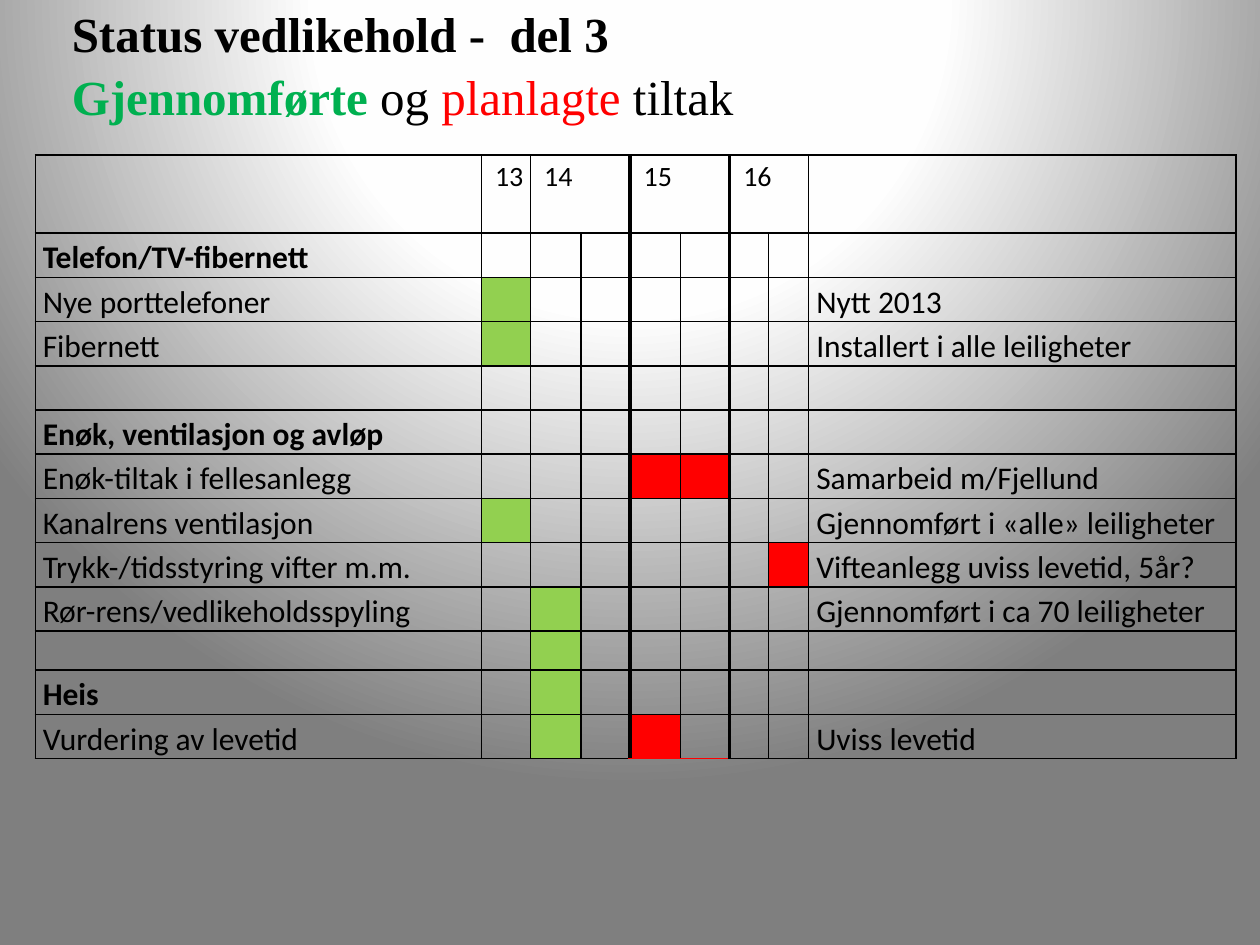
from pptx import Presentation
from pptx.dml.color import RGBColor
from pptx.enum import text
from pptx.oxml import parse_xml
from pptx.oxml.ns import nsdecls
from pptx.util import Inches, Pt

BLACK, GREEN, RED = "000000", "92D050", "FF0000"
COL_WIDTHS = [3.54, 0.39, 0.4, 0.39, 0.4, 0.39, 0.31, 0.32, 3.39]
HEADER_HEIGHT, ROW_HEIGHT, GAP_HEIGHT = 0.62, 0.35, 0.31
GAP_ROW = 10
THICK_EDGES = {4, 6}
YEARS = {1: "13", 2: "14", 4: "15", 6: "16"}
MEASURES = [
    ("Telefon/TV-fibernett", "", {}),
    ("Nye porttelefoner", "Nytt 2013", {1: GREEN}),
    ("Fibernett", "Installert i alle leiligheter", {1: GREEN}),
    ("", "", {}),
    ("Enøk, ventilasjon og avløp", "", {}),
    ("Enøk-tiltak i fellesanlegg", "Samarbeid m/Fjellund", {4: RED, 5: RED}),
    ("Kanalrens ventilasjon", "Gjennomført i «alle» leiligheter", {1: GREEN}),
    ("Trykk-/tidsstyring vifter m.m.", "Vifteanlegg uviss levetid, 5år?", {7: RED}),
    ("Rør-rens/vedlikeholdsspyling", "Gjennomført i ca 70 leiligheter", {2: GREEN}),
    ("", "", {2: GREEN}),
    ("Heis", "", {2: GREEN}),
    ("Vurdering av levetid", "Uviss levetid", {2: GREEN, 4: RED}),
]
HEADINGS = {"Telefon/TV-fibernett", "Enøk, ventilasjon og avløp", "Heis"}


def rgb(color):
    return RGBColor.from_string(color)


def style_run(r, font, size, color=BLACK, bold=False):
    r.font.name = font
    r.font.size = Pt(size)
    r.font.bold = bold
    r.font.color.rgb = rgb(color)


def set_background(s):
    stops = "".join(
        f'<a:gs pos="{pos * 1000}"><a:srgbClr val="{color}"/></a:gs>'
        for pos, color in [(0, "FFFFFF"), (40, "FEFEFE"), (100, "7F7F7F")])
    s.element.cSld.insert(0, parse_xml(
        f'<p:bg {nsdecls("p", "a")}><p:bgPr><a:gradFill rotWithShape="1">'
        f'<a:gsLst>{stops}</a:gsLst><a:path path="circle">'
        '<a:fillToRect l="50000" t="-80000" r="50000" b="180000"/></a:path>'
        '</a:gradFill><a:effectLst/></p:bgPr></p:bg>'))


def add_title(s):
    lines = [
        [("Status vedlikehold -  del 3", BLACK, True)],
        [("Gjennomførte ", "00B050", True), ("og ", BLACK, False),
         ("planlagte ", RED, False), ("tiltak", BLACK, False)],
    ]
    sp = s.shapes.add_textbox(Inches(0.57), Inches(0.03), Inches(7.8), Inches(0.95))
    tf = sp.text_frame
    tf.word_wrap = True
    tf.margin_left = tf.margin_right = tf.margin_top = tf.margin_bottom = 0
    for i, line in enumerate(lines):
        p = tf.add_paragraph() if i else tf.paragraphs[0]
        if i:
            p.space_before = Pt(2)
        for words, color, bold in line:
            r = p.add_run()
            r.text = words
            style_run(r, "Times New Roman", 28, color, bold)


def set_borders(cell, col, bottom=BLACK):
    left = 2.25 if col in THICK_EDGES else 1
    right = 2.25 if col + 1 in THICK_EDGES else 1
    tcPr = cell._tc.get_or_add_tcPr()
    for side, width, color in [("L", left, BLACK), ("R", right, BLACK),
                               ("T", 1, BLACK), ("B", 1, bottom)]:
        tcPr.append(parse_xml(
            f'<a:ln{side} {nsdecls("a")} w="{Pt(width)}"><a:solidFill>'
            f'<a:srgbClr val="{color}"/></a:solidFill></a:ln{side}>'))


def set_fill(cell, color):
    if color:
        cell.fill.solid()
        cell.fill.fore_color.rgb = rgb(color)
    else:
        cell.fill.background()


def set_text(cell, words, size, bold=False):
    cell.margin_left = cell.margin_right = Inches(0.06)
    cell.margin_top = cell.margin_bottom = 0
    cell.vertical_anchor = text.MSO_ANCHOR.TOP
    p = cell.text_frame.paragraphs[0]
    if not words:
        p._p.append(parse_xml(f'<a:endParaRPr {nsdecls("a")} sz="1000"/>'))
        return
    p.text = words
    p.line_spacing = 1.15
    style_run(p.runs[0], "Calibri", size, bold=bold)


def add_plan_table(s):
    heights = [HEADER_HEIGHT] + [ROW_HEIGHT] * len(MEASURES)
    heights[GAP_ROW] = GAP_HEIGHT
    table = s.shapes.add_table(
        len(heights), len(COL_WIDTHS), Inches(0.28), Inches(1.23),
        Inches(sum(COL_WIDTHS)), Inches(sum(heights))).table
    table.first_row = table.horz_banding = False
    for column, width in zip(table.columns, COL_WIDTHS):
        column.width = Inches(width)
    for row, height in zip(table.rows, heights):
        row.height = Inches(height)

    for col in range(len(COL_WIDTHS)):
        cell = table.cell(0, col)
        set_borders(cell, col)
        set_fill(cell, None)
        set_text(cell, YEARS.get(col, ""), 16)
        if col in YEARS:
            cell.margin_left, cell.margin_right = Inches(0.11), 0
    for col in (2, 4, 6):
        table.cell(0, col).merge(table.cell(0, col + 1))
        set_right_edge = table.cell(0, col)._tc.tcPr.find(
            "{http://schemas.openxmlformats.org/drawingml/2006/main}lnR")
        set_right_edge.set("w", str(Pt(2.25 if col + 2 in THICK_EDGES else 1)))

    last_col = len(COL_WIDTHS) - 1
    for row, (measure, status, marks) in enumerate(MEASURES, 1):
        words = {0: measure, last_col: status}
        for col in range(len(COL_WIDTHS)):
            cell = table.cell(row, col)
            red_edge = row == len(MEASURES) and col in (4, 5)
            set_borders(cell, col, RED if red_edge else BLACK)
            set_fill(cell, marks.get(col))
            set_text(cell, words.get(col, ""), 18, words.get(col) in HEADINGS)


def main():
    prs = Presentation()
    prs.slide_width, prs.slide_height = Inches(10), Inches(7.5)
    s = prs.slides.add_slide(prs.slide_layouts[6])
    set_background(s)
    add_plan_table(s)
    add_title(s)
    prs.save("out.pptx")


if __name__ == "__main__":
    main()
